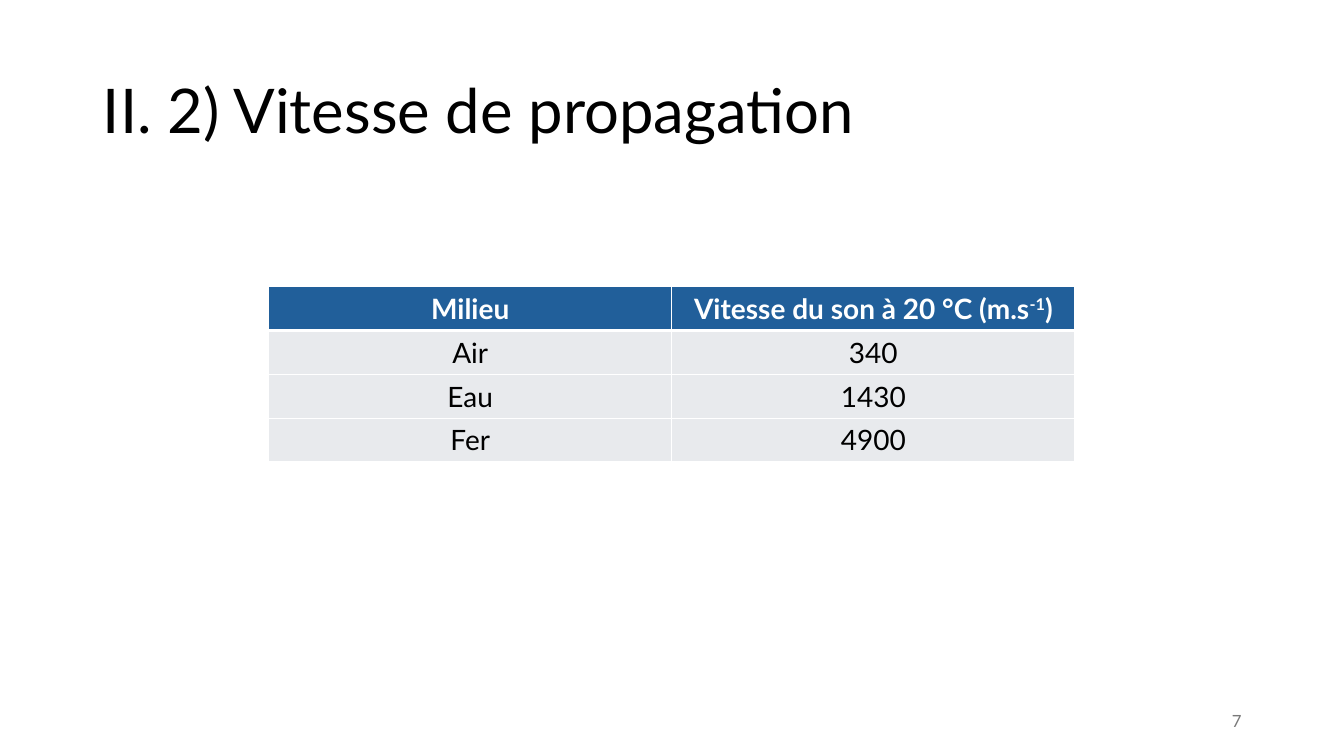
from lxml import etree
from pptx import Presentation
from pptx.dml.color import RGBColor
from pptx.enum.text import MSO_ANCHOR, MSO_AUTO_SIZE, PP_ALIGN
from pptx.oxml.ns import qn
from pptx.util import Cm, Pt

LEFT, CENTER, RIGHT = PP_ALIGN.LEFT, PP_ALIGN.CENTER, PP_ALIGN.RIGHT
MIDDLE = MSO_ANCHOR.MIDDLE
NO_AUTOFIT = MSO_AUTO_SIZE.NONE

FONT = "Lato"
COLORS = {
    "text": "000000",
    "header": "215F9A",
    "body": "E8EAED",
    "white": "FFFFFF",
    "number": "797979",
}
TITLE_ONLY = 5
COLUMN_WIDTH, ROW_HEIGHT = Cm(10.16), Cm(1.1)

# Each cell is a list of (text, is_superscript) spans.
SPEEDS = [
    [[("Milieu", False)],
     [("Vitesse du son à 20 °C (m.s", False), ("-1", True), (")", False)]],
    [[("Air", False)], [("340", False)]],
    [[("Eau", False)], [("1430", False)]],
    [[("Fer", False)], [("4900", False)]],
]


def format_paragraph(para, size, color, align, bold=False):
    para.alignment = align
    para.font.name = FONT
    para.font.size = Pt(size)
    para.font.bold = bold
    para.font.color.rgb = RGBColor.from_string(COLORS[color])


def place(shape, left, top, width, height):
    shape.left, shape.top = Cm(left), Cm(top)
    shape.width, shape.height = Cm(width), Cm(height)


def add_title(page, text):
    title = page.shapes.title
    place(title, 2.34, 1.02, 29.21, 3.68)
    frame = title.text_frame
    frame.text = text
    frame.auto_size = NO_AUTOFIT
    frame.vertical_anchor = MIDDLE
    para = frame.paragraphs[0]
    para.line_spacing = 0.9
    format_paragraph(para, 44, "text", LEFT)


def add_page_number(page, number):
    box = page.shapes.add_textbox(Cm(23.92), Cm(17.66), Cm(7.62), Cm(1.01))
    frame = box.text_frame
    frame.word_wrap = True
    frame.vertical_anchor = MIDDLE
    frame.text = number
    format_paragraph(frame.paragraphs[0], 12, "number", RIGHT)


def set_borders(cell, widths):
    """Draw white borders; widths maps the sides L, R, T, B to points."""
    properties = cell._tc.get_or_add_tcPr()
    for side, width in widths.items():
        line = etree.SubElement(properties, qn(f"a:ln{side}"), w=str(Pt(width)))
        fill = etree.SubElement(line, qn("a:solidFill"))
        etree.SubElement(fill, qn("a:srgbClr"), val=COLORS["white"])


def fill_cell(cell, spans, is_header, top_border, bottom_border):
    set_borders(cell, {"L": 1, "R": 1, "T": top_border, "B": bottom_border})
    cell.fill.solid()
    fill_color = COLORS["header" if is_header else "body"]
    cell.fill.fore_color.rgb = RGBColor.from_string(fill_color)
    para = cell.text_frame.paragraphs[0]
    format_paragraph(para, 20, "white" if is_header else "text", CENTER, is_header)
    for text, is_superscript in spans:
        span = para.add_run()
        span.text = text
        if is_superscript:
            span._r.get_or_add_rPr().set("baseline", "30000")


def add_speed_table(page, rows):
    row_count, column_count = len(rows), len(rows[0])
    table = page.shapes.add_table(
        row_count, column_count, Cm(6.77), Cm(7.22),
        COLUMN_WIDTH * column_count, ROW_HEIGHT * row_count).table
    for row_index, row in enumerate(rows):
        top_border = 3 if row_index == 1 else 1
        bottom_border = 3 if row_index == 0 else 1
        for column_index, spans in enumerate(row):
            fill_cell(table.cell(row_index, column_index), spans,
                      row_index == 0, top_border, bottom_border)


def main():
    deck = Presentation()
    deck.slide_width, deck.slide_height = Cm(33.87), Cm(19.05)
    page = deck.slides.add_slide(deck.slide_layouts[TITLE_ONLY])
    add_title(page, "II. 2) Vitesse de propagation")
    add_speed_table(page, SPEEDS)
    add_page_number(page, "7")
    deck.save("out.pptx")


if __name__ == "__main__":
    main()
